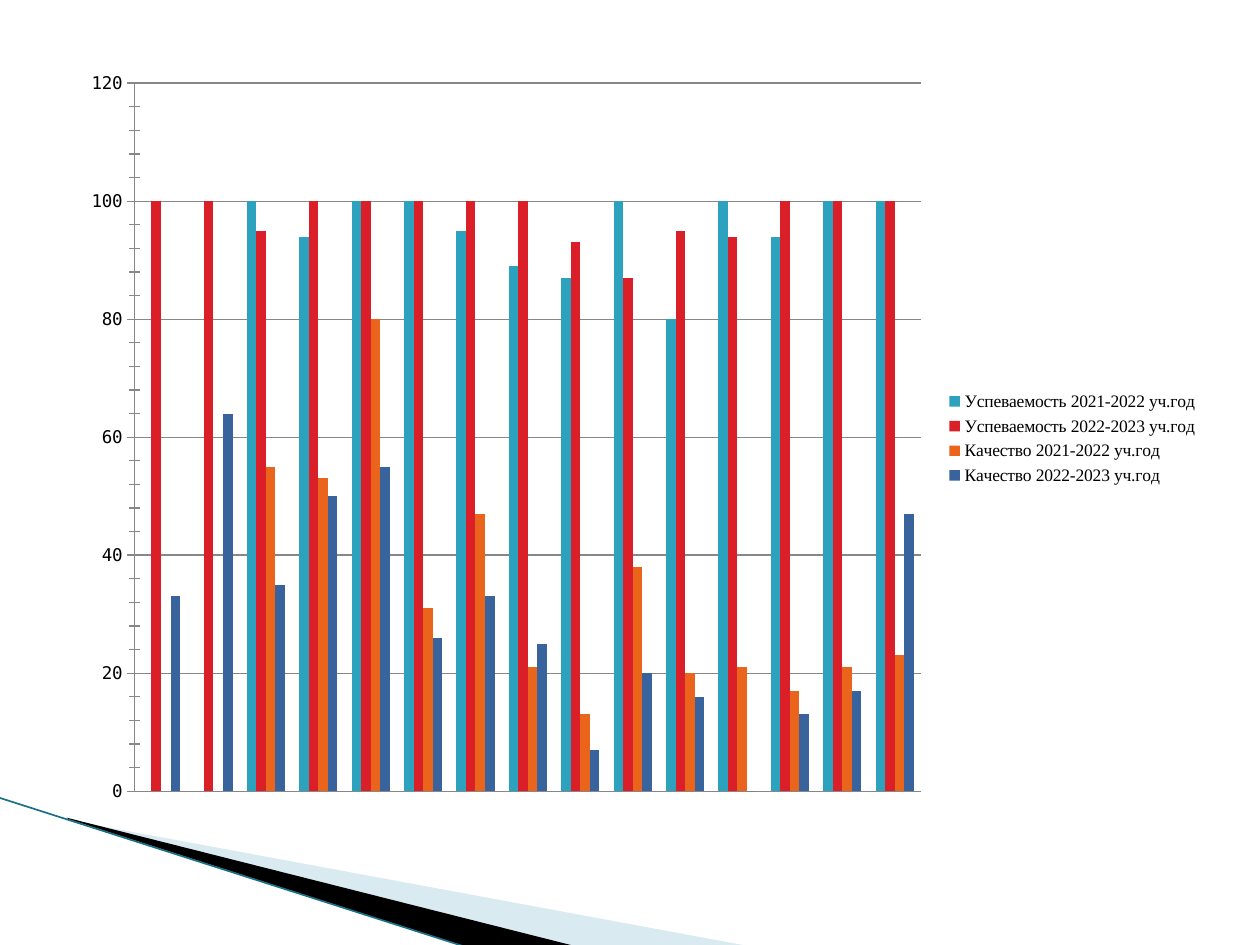
import pptx
import pptx.chart.data
import pptx.dml.color
import pptx.enum.chart
import pptx.enum.shapes
import pptx.oxml
import pptx.oxml.ns
import pptx.util
from lxml import etree

Inches, Pt = pptx.util.Inches, pptx.util.Pt
qn = pptx.oxml.ns.qn

SERIES = [
    ("Успеваемость 2021-2022 уч.год", "2DA2BF",
     [None, None, 100, 94, 100, 100, 95, 89, 87, 100, 80, 100, 94, 100, 100]),
    ("Успеваемость 2022-2023 уч.год", "DA1F28",
     [100, 100, 95, 100, 100, 100, 100, 100, 93, 87, 95, 94, 100, 100, 100]),
    ("Качество 2021-2022 уч.год", "EB641B",
     [None, None, 55, 53, 80, 31, 47, 21, 13, 38, 20, 21, 17, 21, 23]),
    ("Качество 2022-2023 уч.год", "39639D",
     [33, 64, 35, 50, 55, 26, 33, 25, 7, 20, 16, 0, 13, 17, 47]),
]


def rgb(code):
    return pptx.dml.color.RGBColor.from_string(code)


def set_frame(shape, frame):
    """Give an outline a new frame while its points stay in place."""
    left, top, width, height = [Inches(v) for v in frame]
    path = shape._element.find(".//" + qn("a:path"))
    for pt in path.iter(qn("a:pt")):
        pt.set("x", str(int(pt.get("x")) + shape.left - left))
        pt.set("y", str(int(pt.get("y")) + shape.top - top))
    path.set("w", str(width))
    path.set("h", str(height))
    shape.left, shape.top = left, top
    shape.width, shape.height = width, height


def add_wedge(slide, points, frame, color, alpha=None):
    start, *rest = [(Inches(x), Inches(y)) for x, y in points]
    form = slide.shapes.build_freeform(*start)
    form.add_line_segments(rest, close=True)
    wedge = form.convert_to_shape()
    set_frame(wedge, frame)
    wedge.shadow.inherit = False
    wedge.fill.solid()
    wedge.fill.fore_color.rgb = rgb(color)
    wedge.line.fill.background()
    if alpha is not None:
        tone = wedge.fill._xPr.find(".//" + qn("a:srgbClr"))
        etree.SubElement(tone, qn("a:alpha")).set("val", str(alpha * 1000))


def add_line(slide, start, end, color, width):
    line = slide.shapes.add_connector(
        pptx.enum.shapes.MSO_CONNECTOR.STRAIGHT,
        *[Inches(v) for v in start + end])
    line.line.color.rgb = rgb(color)
    line.line.width = Pt(width)
    etree.SubElement(line._element.spPr, qn("a:effectLst"))


def set_font(font, name):
    font.name = name
    font.size = Pt(10)
    font.color.rgb = rgb("000000")


def set_plot_area(chart, x, y, w, h):
    """Pin the inner plot area, in inches within the chart."""
    area = chart._chartSpace.chart.plotArea
    for old in area.findall(qn("c:layout")):
        area.remove(old)
    layout = etree.Element(qn("c:layout"))
    manual = etree.SubElement(layout, qn("c:manualLayout"))
    rules = [("layoutTarget", "inner"), ("xMode", "edge"), ("yMode", "edge"),
             ("x", x / 9.06), ("y", y / 6.02), ("w", w / 9.06), ("h", h / 6.02)]
    for tag, val in rules:
        etree.SubElement(manual, qn("c:" + tag)).set("val", str(val))
    area.insert(0, layout)


def style_axes(chart):
    marks = pptx.enum.chart.XL_TICK_MARK
    cats, vals = chart.category_axis, chart.value_axis
    cats.tick_label_position = pptx.enum.chart.XL_TICK_LABEL_POSITION.NONE
    cats.major_tick_mark = cats.minor_tick_mark = marks.NONE
    cats.has_major_gridlines = False
    vals.minimum_scale, vals.maximum_scale = 0, 120
    vals.major_unit, vals.minor_unit = 20, 4
    vals.major_tick_mark = marks.OUTSIDE
    vals.minor_tick_mark = marks.CROSS
    vals.has_major_gridlines = True
    for part in (cats, vals, vals.major_gridlines):
        part.format.line.color.rgb = rgb("878787")
        part.format.line.width = Pt(0.75)


def add_chart(slide):
    data = pptx.chart.data.CategoryChartData()
    data.categories = [str(n) for n in range(1, 16)]
    for name, _, vals in SERIES:
        data.add_series(name, vals)
    chart = slide.shapes.add_chart(
        pptx.enum.chart.XL_CHART_TYPE.COLUMN_CLUSTERED,
        Inches(0.55), Inches(0.47), Inches(9.06), Inches(6.02), data).chart
    chart.has_title = False
    set_font(chart.font, "DejaVu Sans Mono")
    set_plot_area(chart, 0.52, 0.19, 6.24, 5.62)
    style_axes(chart)

    # Bars
    plot = chart.plots[0]
    plot.gap_width, plot.overlap = 150, 0
    plot.vary_by_categories = False
    for bars, (_, color, _) in zip(plot.series, SERIES):
        bars.format.fill.solid()
        bars.format.fill.fore_color.rgb = rgb(color)
        bars.invert_if_negative = False

    # Legend
    chart.has_legend = True
    chart.legend.position = pptx.enum.chart.XL_LEGEND_POSITION.RIGHT
    chart.legend.include_in_layout = True
    set_font(chart.legend.font, "Times New Roman")


def main():
    deck = pptx.Presentation()
    deck.slide_width, deck.slide_height = Inches(10), Inches(7.5)
    slide = deck.slides.add_slide(deck.slide_layouts[6])

    # Corner wedges
    add_wedge(slide, [(0.55, 6.51), (5.95, 7.51), (4.56, 7.51), (0.55, 6.5)],
              (0.78, 5.47, 4.16, 1.58), "A0CBDC", alpha=40)
    add_wedge(slide, [(0.53, 6.49), (4.57, 7.51), (3.72, 7.52), (0.54, 6.5)],
              (-0.06, 6.33, 4.16, 0.92), "000000")
    add_line(slide, (-0.01, 6.33), (3.71, 7.52), "1A7085", 0.95)

    # Results by class
    add_chart(slide)
    deck.save("out.pptx")


if __name__ == "__main__":
    main()
